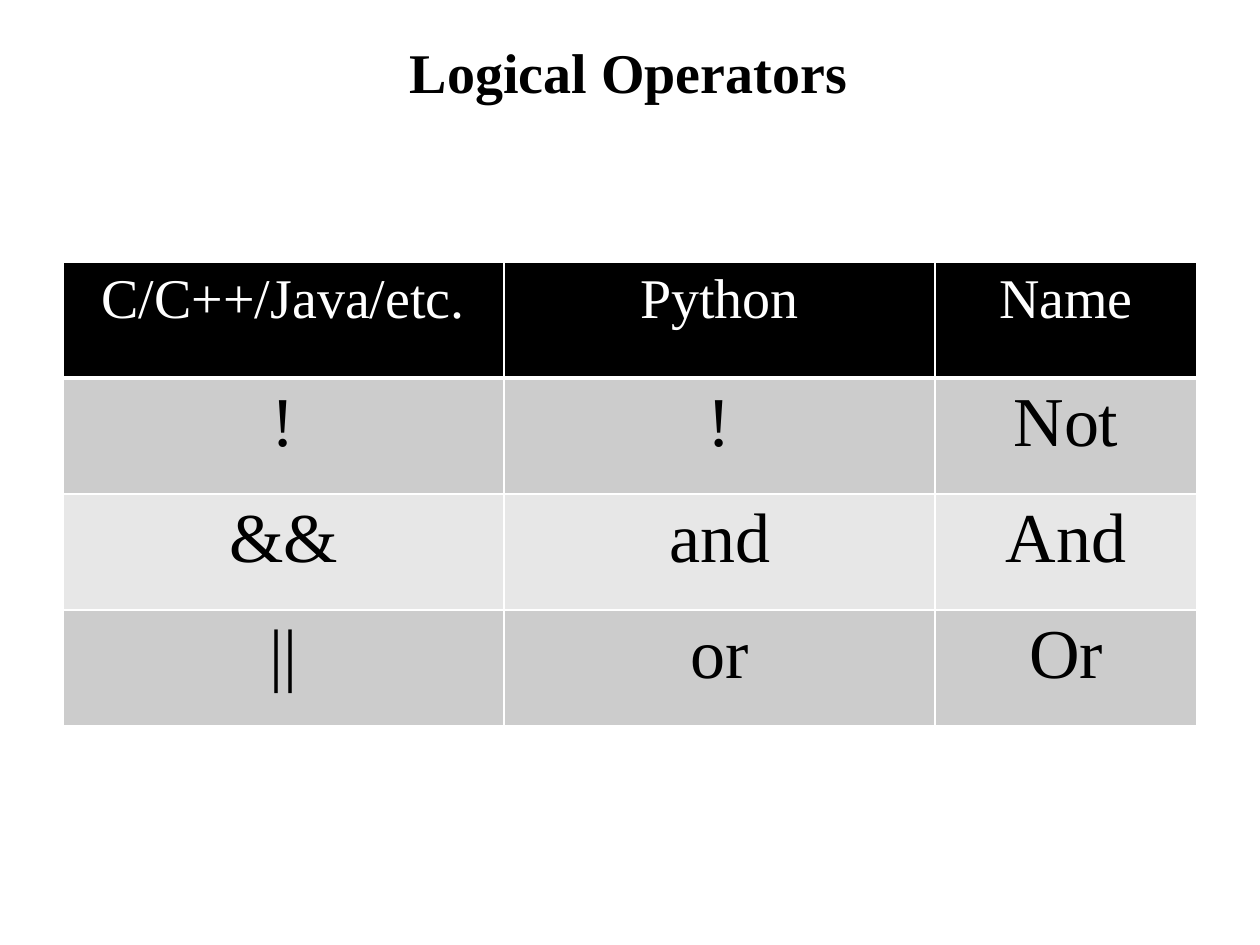
from dataclasses import dataclass

from lxml.etree import SubElement
from pptx import Presentation
from pptx.dml.color import RGBColor
from pptx.enum.text import MSO_ANCHOR as Anchor, PP_ALIGN as Align
from pptx.oxml.ns import qn
from pptx.util import Cm, Pt

FONT = "Times New Roman"
COLORS = {
    "black": "000000",
    "white": "FFFFFF",
    "dark_band": "CCCCCC",
    "light_band": "E7E7E7",
}
COLUMN_WIDTHS = (8.89, 8.69, 5.28)
ROW_HEIGHT = 2.34


@dataclass(frozen=True)
class RowStyle:
    fill: str
    text: str
    size: int
    bottom_border: int = 1


@dataclass(frozen=True)
class OperatorRow:
    labels: tuple[str, str, str]
    style: RowStyle


HEADER = RowStyle("black", "white", 32, bottom_border=3)
DARK = RowStyle("dark_band", "black", 40)
LIGHT = RowStyle("light_band", "black", 40)

ROWS = (
    OperatorRow(("C/C++/Java/etc.", "Python", "Name"), HEADER),
    OperatorRow(("!", "!", "Not"), DARK),
    OperatorRow(("&&", "and", "And"), LIGHT),
    OperatorRow(("||", "or", "Or"), DARK),
)


def write_text(frame, text: str, size: int, color: str, bold: bool = False) -> None:
    para = frame.paragraphs[0]
    para.alignment = Align.CENTER
    run = para.add_run()
    run.text = text
    run.font.name = FONT
    run.font.size = Pt(size)
    run.font.bold = bold
    run.font.color.rgb = RGBColor.from_string(COLORS[color])


def add_borders(cell, bottom_width: int) -> None:
    properties = cell._tc.get_or_add_tcPr()
    widths = {"lnL": 1, "lnR": 1, "lnT": 1, "lnB": bottom_width}
    for side, width in widths.items():
        line = SubElement(properties, qn(f"a:{side}"), w=str(Pt(width)))
        fill = SubElement(line, qn("a:solidFill"))
        SubElement(fill, qn("a:srgbClr"), val=COLORS["white"])


def fill_cell(cell, text: str, style: RowStyle) -> None:
    add_borders(cell, style.bottom_border)
    cell.fill.solid()
    cell.fill.fore_color.rgb = RGBColor.from_string(COLORS[style.fill])
    cell.vertical_anchor = Anchor.TOP
    write_text(cell.text_frame, text, style.size, style.text)


def add_title(page, text: str) -> None:
    title = page.shapes.title
    title.left, title.top = Cm(1.88), Cm(0.15)
    title.width, title.height = Cm(21.59), Cm(2.57)
    title.text_frame.vertical_anchor = Anchor.MIDDLE
    write_text(title.text_frame, text, 32, "black", bold=True)


def add_operator_table(page) -> None:
    table = page.shapes.add_table(
        len(ROWS), len(COLUMN_WIDTHS), Cm(1.27), Cm(5.28),
        Cm(sum(COLUMN_WIDTHS)), Cm(ROW_HEIGHT * len(ROWS)),
    ).table
    for column, width in zip(table.columns, COLUMN_WIDTHS):
        column.width = Cm(width)
    for row, operator in zip(table.rows, ROWS):
        row.height = Cm(ROW_HEIGHT)
        for cell, label in zip(row.cells, operator.labels):
            fill_cell(cell, label, operator.style)


def main() -> None:
    deck = Presentation()
    deck.slide_width, deck.slide_height = Cm(25.4), Cm(19.05)
    page = deck.slides.add_slide(deck.slide_layouts.get_by_name("Title Only"))
    add_title(page, "Logical Operators")
    add_operator_table(page)
    deck.save("out.pptx")


if __name__ == "__main__":
    main()
